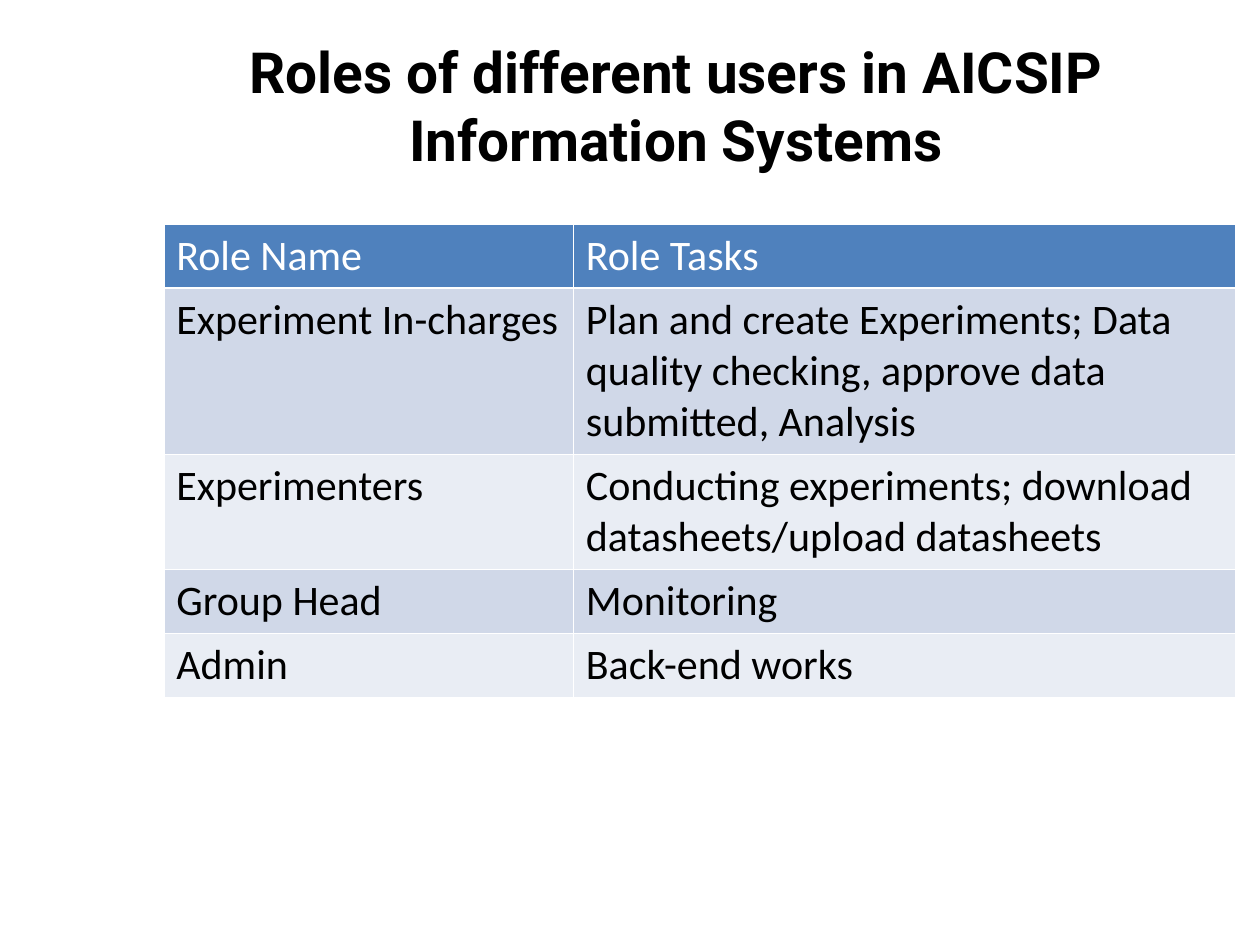
import dataclasses

import pptx
import pptx.dml.color
import pptx.enum.text
import pptx.util

WIDTH, HEIGHT = 10, 7.5
COLUMN_WIDTHS = (3.25, 5.26)
ROW_HEIGHT = 0.41
HEADER_FILL = "4F81BD"
BAND_FILLS = ("D0D8E8", "E9EDF4")


@dataclasses.dataclass
class Role:
    name: str
    tasks: str


HEADER = Role("Role Name", "Role Tasks")
ROLES = [
    Role("Experiment In-charges",
         "Plan and create Experiments; Data quality checking, approve data submitted, Analysis"),
    Role("Experimenters", "Conducting experiments; download datasheets/upload datasheets"),
    Role("Group Head", "Monitoring"),
    Role("Admin", "Back-end works"),
]


def color(value: str) -> pptx.dml.color.RGBColor:
    return pptx.dml.color.RGBColor.from_string(value)


def write_text(text_frame, text: str, *, font: str = "Calibri", size: float = 24,
               fill: str = "000000", bold: bool = False, align=None) -> None:
    text_frame.text = text
    paragraph = text_frame.paragraphs[0]
    paragraph.alignment = align
    run_font = paragraph.runs[0].font
    run_font.name = font
    run_font.size = pptx.util.Pt(size)
    run_font.bold = bold
    run_font.color.rgb = color(fill)


def fill_row(row, role: Role, background: str, text_color: str) -> None:
    row.height = pptx.util.Inches(ROW_HEIGHT)
    for cell, text in zip(row.cells, (role.name, role.tasks)):
        cell.fill.solid()
        cell.fill.fore_color.rgb = color(background)
        write_text(cell.text_frame, text, fill=text_color)


def add_title(slide) -> None:
    title = slide.shapes.title
    title.left, title.top, title.width, title.height = map(
        pptx.util.Inches, (0.73, 0.21, WIDTH - 0.73, 1.25))
    title.text_frame.word_wrap = True
    title.text_frame.auto_size = pptx.enum.text.MSO_AUTO_SIZE.NONE
    title.text_frame.vertical_anchor = pptx.enum.text.MSO_ANCHOR.MIDDLE
    write_text(title.text_frame, "Roles of different users in AICSIP Information Systems",
               font="Roboto", size=32.4, bold=True, align=pptx.enum.text.PP_ALIGN.CENTER)


def add_roles_table(slide) -> None:
    # The default table style supplies the white cell borders
    frame = slide.shapes.add_table(
        len(ROLES) + 1, len(COLUMN_WIDTHS),
        *map(pptx.util.Inches, (1.3, 1.78, sum(COLUMN_WIDTHS), 3.7)))
    table = frame.table
    for column, width in zip(table.columns, COLUMN_WIDTHS):
        column.width = pptx.util.Inches(width)
    header_row, *role_rows = table.rows
    fill_row(header_row, HEADER, HEADER_FILL, "FFFFFF")
    for index, (row, role) in enumerate(zip(role_rows, ROLES)):
        fill_row(row, role, BAND_FILLS[index % 2], "000000")
    # Rows grow to fit their text, so the frame is taller than their sum
    frame.height = pptx.util.Inches(3.7)


def main() -> None:
    presentation = pptx.Presentation()
    presentation.slide_width = pptx.util.Inches(WIDTH)
    presentation.slide_height = pptx.util.Inches(HEIGHT)
    # Title-only layout
    slide = presentation.slides.add_slide(presentation.slide_layouts[5])
    add_title(slide)
    add_roles_table(slide)
    presentation.save("out.pptx")


if __name__ == "__main__":
    main()
